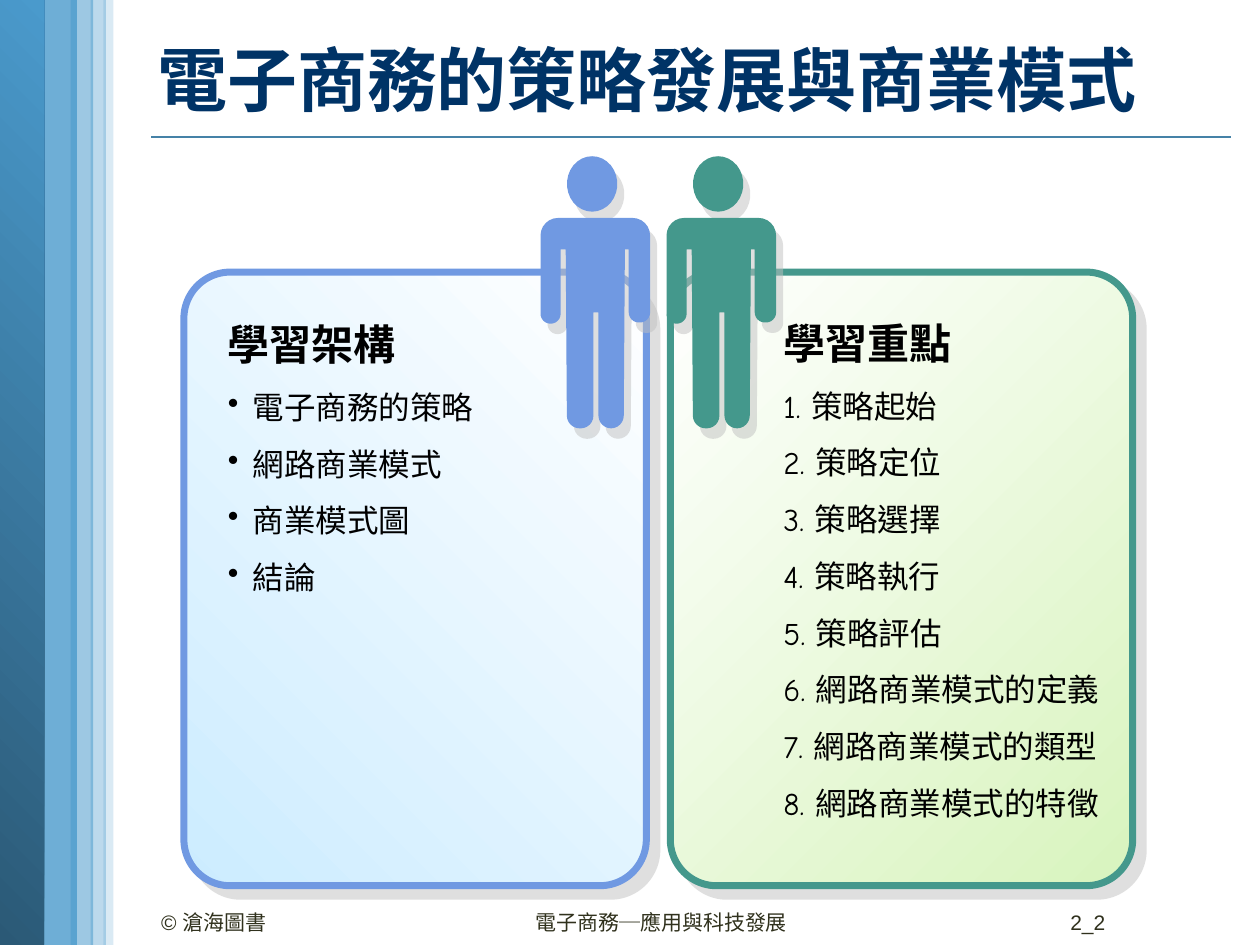
import math
from dataclasses import dataclass
from typing import Optional

from lxml import etree
from pptx import Presentation
from pptx.dml.color import RGBColor
from pptx.enum import shapes, text
from pptx.oxml import ns
from pptx.util import Pt

PX = 9144  # EMU per px, 100 px to the inch

BLACK = RGBColor(0x00, 0x00, 0x00)
NAVY = RGBColor(0x00, 0x33, 0x66)
FOOTER_INK = RGBColor(0x30, 0x31, 0x1D)
RULE_BLUE = RGBColor(0x45, 0x82, 0xA7)
STRIPE_BLUE = RGBColor(0x4A, 0x9A, 0xCC)
DEEP_BLUE = RGBColor(0x2B, 0x59, 0x76)
BLUE = RGBColor(0x70, 0x99, 0xE2)
GREEN = RGBColor(0x44, 0x98, 0x8C)
PALE_BLUE = RGBColor(0xCC, 0xEC, 0xFF)
PALE_GREEN = RGBColor(0xD8, 0xF4, 0xBE)
WHITE = RGBColor(0xFF, 0xFF, 0xFF)

Box = tuple[int, int, int, int]


@dataclass
class Stripe:
    box: Box
    opacity: Optional[int]  # percent; None means the gradient edge


@dataclass
class Panel:
    left: int
    color: RGBColor
    gradient: tuple[RGBColor, RGBColor]
    angle: int
    person_left: int
    text_box: Box
    heading: str
    items: list[str]
    hanging: int
    bullet: str = ""


STRIPES = [
    Stripe((30, 0, 31, 753), 80),
    Stripe((-1, 0, 36, 750), None),
    Stripe((82, -2, 8, 752), 20),
    Stripe((56, 0, 18, 751), 54),
    Stripe((72, 0, 12, 752), 37),
]

TOPICS = ["策略起始", "策略定位", "策略選擇", "策略執行", "策略評估",
          "網路商業模式的定義", "網路商業模式的類型", "網路商業模式的特徵"]

PANELS = [
    Panel(146, BLUE, (PALE_BLUE, WHITE), 45, 429, (171, 228, 310, 252), "學習架構",
          ["電子商務的策略", "網路商業模式", "商業模式圖", "結論"], 20, "•"),
    Panel(532, GREEN, (WHITE, PALE_GREEN), 315, 529, (612, 227, 283, 439), "學習重點",
          [f"{n}. {topic}" for n, topic in enumerate(TOPICS, 1)], 38),
]

# Body outline: x from the person's left edge, y on the slide, corner radius
BODY = [
    (0, 173, 14), (0, 257, 8), (16, 257, 8), (16, 198, 0), (20, 198, 0),
    (21, 340, 10), (42, 340, 10), (42, 248, 0), (46, 248, 0), (46, 340, 10),
    (66, 340, 10), (67, 198, 0), (70, 198, 0), (70, 256, 8), (87, 256, 8),
    (87, 173, 14),
]


def emu(box: Box) -> list[int]:
    return [length * PX for length in box]


def add_preset(slide, kind, box: Box):
    shape = slide.shapes.add_shape(kind, *emu(box))
    shape.shadow.inherit = False
    shape.line.fill.background()
    return shape


def set_gradient(shape, colors, angle: int) -> None:
    shape.fill.gradient()
    shape.fill.gradient_angle = angle
    for stop, color in zip(shape.fill.gradient_stops, colors):
        stop.color.rgb = color


def add_alpha(color_element, percent: int) -> None:
    etree.SubElement(color_element, ns.qn("a:alpha"), val=str(percent * 1000))


def add_shadow(shape, distance: float, degrees: int) -> None:
    shape.shadow.inherit = False
    effects = shape.element.spPr.find(ns.qn("a:effectLst"))
    outer = etree.SubElement(effects, ns.qn("a:outerShdw"), blurRad="0",
                             dist=str(Pt(distance)), dir=str(degrees * 60000),
                             algn="ctr", rotWithShape="0")
    add_alpha(etree.SubElement(outer, ns.qn("a:srgbClr"), val="C0C0C0"), 50)


def add_text(slide, box: Box, lines: list[str], *, size: int, color: RGBColor,
             font: str = "Arial", bold: bool = False, align=None, anchor=None,
             item_size: int = 18, hanging: int = 0, bullet: str = "",
             spacing: Optional[float] = None, grow: bool = False) -> None:
    """First line takes the main format; further lines are list items."""
    frame = slide.shapes.add_textbox(*emu(box)).text_frame
    frame.word_wrap = True
    if anchor is not None:
        frame.vertical_anchor = anchor
    if grow:
        frame.auto_size = text.MSO_AUTO_SIZE.SHAPE_TO_FIT_TEXT
    for index, line in enumerate(lines):
        paragraph = frame.add_paragraph() if index else frame.paragraphs[0]
        if index:
            properties = paragraph._p.get_or_add_pPr()
            properties.set("marL", str(hanging * PX))
            properties.set("indent", str(-hanging * PX))
            if bullet:
                etree.SubElement(properties, ns.qn("a:buChar"), char=bullet)
        paragraph.line_spacing = spacing
        paragraph.alignment = align
        run = paragraph.add_run()
        run.text = line
        run.font.name = font
        run.font.size = Pt(item_size if index else size)
        run.font.bold = bold and not index
        run.font.color.rgb = color
        run._r.get_or_add_rPr().set("lang", "zh-TW")


def rounded_outline(corners, left: int) -> list[tuple[float, float]]:
    points = []
    for i, (x, y, radius) in enumerate(corners):
        if not radius:
            points.append((left + x, y))
            continue
        reach = []
        for nx, ny, _ in (corners[i - 1], corners[(i + 1) % len(corners)]):
            share = radius / math.hypot(nx - x, ny - y)
            reach.append(((nx - x) * share, (ny - y) * share))
        (ax, ay), (bx, by) = reach
        for step in range(7):
            turn = math.radians(15 * step)
            a, b = 1 - math.sin(turn), 1 - math.cos(turn)
            points.append((left + x + ax * a + bx * b, y + ay * a + by * b))
    return points


def add_outline(slide, points, color: RGBColor) -> None:
    start, *rest = [(round(x * PX), round(y * PX)) for x, y in points]
    builder = slide.shapes.build_freeform(*start)
    builder.add_line_segments(rest, close=True)
    shape = builder.convert_to_shape()
    shape.fill.solid()
    shape.fill.fore_color.rgb = color
    shape.line.fill.background()
    add_shadow(shape, 7.2, 56)


def add_person(slide, left: int, color: RGBColor) -> None:
    angles = [math.radians(12 * step) for step in range(30)]
    head = [(left + 41 + 20 * math.sin(a), 146 - 22 * math.cos(a)) for a in angles]
    add_outline(slide, head, color)
    add_outline(slide, rounded_outline(BODY, left), color)


def add_panel(slide, panel: Panel) -> None:
    card = add_preset(slide, shapes.MSO_SHAPE.ROUNDED_RECTANGLE,
                      (panel.left, 216, 367, 487))
    card.adjustments[0] = 0.1
    set_gradient(card, panel.gradient, panel.angle)
    card.line.color.rgb = panel.color
    card.line.width = Pt(4)
    add_shadow(card, 8.5, 45)
    add_person(slide, panel.person_left, panel.color)
    add_text(slide, panel.text_box, [panel.heading, *panel.items], size=24,
             color=BLACK, font="Comic Neue", bold=True, hanging=panel.hanging,
             bullet=panel.bullet, spacing=1.5, grow=True)


def add_stripe(slide, stripe: Stripe) -> None:
    band = add_preset(slide, shapes.MSO_SHAPE.RECTANGLE, stripe.box)
    if stripe.opacity is None:
        set_gradient(band, (DEEP_BLUE, STRIPE_BLUE), 45)
        return
    band.fill.solid()
    band.fill.fore_color.rgb = STRIPE_BLUE
    add_alpha(band.element.spPr.find(f"{ns.qn('a:solidFill')}/{ns.qn('a:srgbClr')}"),
              stripe.opacity)


def main() -> None:
    deck = Presentation()
    deck.slide_width, deck.slide_height = 1000 * PX, 750 * PX
    slide = deck.slides.add_slide(deck.slide_layouts[6])

    # Title rule and side stripes
    rule = slide.shapes.add_connector(shapes.MSO_CONNECTOR.STRAIGHT,
                                      *emu((120, 109, 977, 109)))
    rule.line.color.rgb = RULE_BLUE
    rule.line.width = Pt(1)
    etree.SubElement(rule._element.spPr, ns.qn("a:effectLst"))
    for stripe in STRIPES:
        add_stripe(slide, stripe)

    # Title
    add_text(slide, (115, 7, 870, 111), ["電子商務的策略發展與商業模式"], size=40,
             color=NAVY, font="Comic Neue", bold=True, anchor=text.MSO_ANCHOR.MIDDLE)

    # Panels with their people
    for panel in PANELS:
        add_panel(slide, panel)

    # Footer
    for left, width, words, align in [
        (118, 233, "© 滄海圖書", None),
        (415, 236, "電子商務─應用與科技發展", None),
        (815, 72, "2_2", text.PP_ALIGN.RIGHT),
    ]:
        add_text(slide, (left, 717, width, 26), [words], size=12,
                 color=FOOTER_INK, align=align)

    deck.save("out.pptx")


if __name__ == "__main__":
    main()
